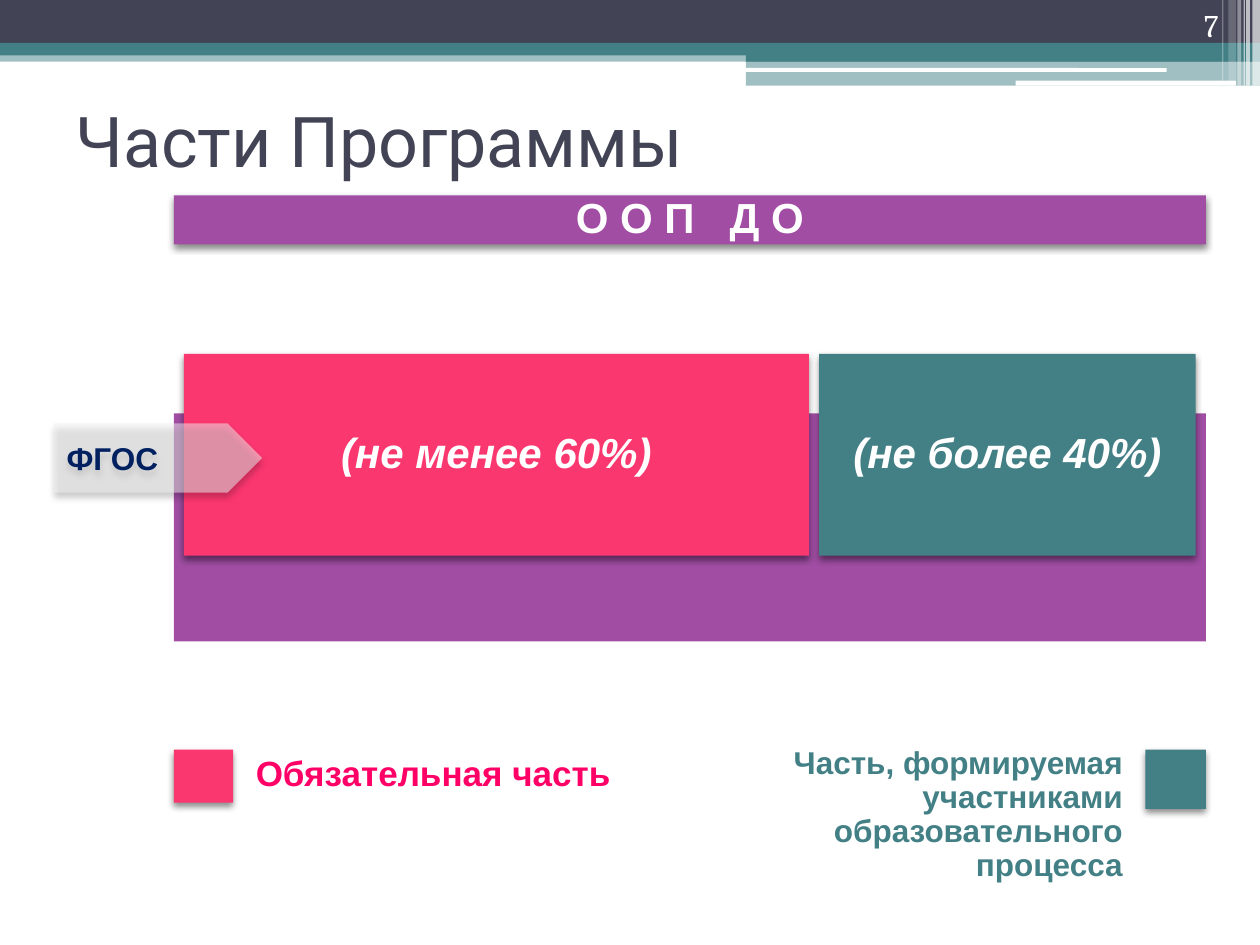
from typing import NamedTuple

import pptx
import pptx.dml.color
import pptx.enum.shapes
import pptx.enum.text
import pptx.oxml
import pptx.oxml.ns
import pptx.util
from lxml import etree

PX = 9144  # EMU in one px, 100 px to the inch
SHAPE = pptx.enum.shapes.MSO_SHAPE
ALIGN = pptx.enum.text.PP_ALIGN
ANCHOR = pptx.enum.text.MSO_ANCHOR

WHITE, NAVY, TEAL = "FFFFFF", "424456", "438086"
PURPLE, PINK, MAGENTA = "A04DA3", "FB376F", "FF0066"
GREY, DARK_BLUE = "F2F2F2", "002060"


class Box(NamedTuple):
    left: int
    top: int
    width: int
    height: int


class Panel(NamedTuple):
    """A filled shape; opacity in percent, shadow opacity 0 for none."""
    box: Box
    fill: str
    opacity: int = 100
    kind: SHAPE = SHAPE.RECTANGLE
    shadow: int = 0
    shadow_distance: int = 2


HEADER = [
    Panel(Box(0, 40, 1000, 9), TEAL, 50),
    Panel(Box(0, 0, 1000, 34), NAVY),
    Panel(Box(0, 34, 1000, 10), TEAL),
    Panel(Box(592, 39, 408, 10), TEAL),
    Panel(Box(592, 48, 408, 20), TEAL, 50),
    Panel(Box(591, 54, 335, 3), WHITE, kind=SHAPE.ROUNDED_RECTANGLE),
    Panel(Box(806, 64, 175, 4), WHITE, kind=SHAPE.ROUNDED_RECTANGLE),
    Panel(Box(994, 0, 6, 68), WHITE, 65),
    Panel(Box(989, 0, 3, 68), WHITE, 65),
    Panel(Box(987, 0, 1, 68), WHITE, 60),
    Panel(Box(982, 0, 3, 68), WHITE, 40),
    Panel(Box(975, 0, 6, 64), WHITE, 20),
    Panel(Box(970, 0, 1, 64), WHITE, 30),
]
PROGRAM_BAR = Panel(Box(138, 155, 819, 39), PURPLE, shadow=45)
BACKDROP = Panel(Box(138, 328, 819, 181), PURPLE)
REQUIRED_PART = Panel(Box(146, 281, 496, 160), PINK, shadow=45)
OPTIONAL_PART = Panel(Box(650, 281, 299, 160), TEAL, shadow=45)
STANDARD_ARROW = Panel(Box(43, 336, 165, 55), GREY, 50, SHAPE.PENTAGON, 40, 3)
LEGEND_KEYS = [
    Panel(Box(138, 595, 47, 42), PINK, shadow=45),
    Panel(Box(909, 595, 48, 47), TEAL, shadow=45),
]


def rgb(color: str) -> pptx.dml.color.RGBColor:
    return pptx.dml.color.RGBColor.from_string(color)


def emu(box: Box) -> list[int]:
    return [length * PX for length in box]


def add_shadow(s, opacity: int, distance: int) -> None:
    s._element.spPr.append(pptx.oxml.parse_xml(
        f'<a:effectLst {pptx.oxml.ns.nsdecls("a")}>'
        f'<a:outerShdw blurRad="{pptx.util.Pt(4)}" dist="{pptx.util.Pt(distance)}" '
        'dir="5400000" algn="ctr" rotWithShape="0"><a:srgbClr val="000000">'
        f'<a:alpha val="{opacity * 1000}"/></a:srgbClr></a:outerShdw></a:effectLst>'))


def draw_panel(slide, panel: Panel):
    s = slide.shapes.add_shape(panel.kind, *emu(panel.box))
    s.fill.solid()
    s.fill.fore_color.rgb = rgb(panel.fill)
    s.line.fill.background()
    if panel.opacity < 100:
        color = s._element.spPr.find(".//" + pptx.oxml.ns.qn("a:srgbClr"))
        alpha = etree.SubElement(color, pptx.oxml.ns.qn("a:alpha"))
        alpha.set("val", str(panel.opacity * 1000))
    if panel.shadow:
        add_shadow(s, panel.shadow, panel.shadow_distance)
    else:
        s.shadow.inherit = False
    return s


def write_text(s, text: str, *, size: int, color: str, font: str = "Arial",
               bold: bool = True, italic: bool = False, align=ALIGN.LEFT,
               anchor=ANCHOR.MIDDLE, spacing: float = 1.0, gap: float = 0,
               inset: tuple[int, int, int, int] = (10, 5, 10, 5)) -> None:
    """Newlines part paragraphs, bars part runs; a lone space is widened by gap points."""
    tf = s.text_frame
    tf.word_wrap = True
    tf.vertical_anchor = anchor
    tf.margin_left, tf.margin_top, tf.margin_right, tf.margin_bottom = (
        side * PX for side in inset)
    for i, line in enumerate(text.split("\n")):
        p = tf.add_paragraph() if i else tf.paragraphs[0]
        p.alignment = align
        p.line_spacing = spacing
        for piece in line.split("|"):
            r = p.add_run()
            r.text = piece
            r.font.size = pptx.util.Pt(size)
            r.font.name = font
            r.font.bold = bold
            r.font.italic = italic
            r.font.color.rgb = rgb(color)
            if piece == " ":
                r._r.get_or_add_rPr().set("spc", str(round(gap * 100)))


def add_label(slide, box: Box, text: str, **style) -> None:
    write_text(slide.shapes.add_textbox(*emu(box)), text, **style)


def main() -> None:
    prs = pptx.Presentation()
    prs.slide_width, prs.slide_height = 1000 * PX, 750 * PX
    slide = prs.slides.add_slide(prs.slide_layouts[6])

    for panel in HEADER:
        draw_panel(slide, panel)
    add_label(slide, Box(50, 52, 900, 118), "Части Программы",
              size=40, color=NAVY, font="Roboto", bold=False)

    write_text(draw_panel(slide, PROGRAM_BAR), "О О П| |Д О", size=24, color=WHITE,
               align=ALIGN.CENTER, spacing=0.9, gap=13.3, inset=(11,) * 4)
    draw_panel(slide, BACKDROP)
    for part, share in ((REQUIRED_PART, "(не менее 60%)"),
                        (OPTIONAL_PART, "(не более 40%)")):
        write_text(draw_panel(slide, part), share, size=24, color=WHITE, italic=True,
                   align=ALIGN.CENTER, spacing=0.9, inset=(17,) * 4)
    write_text(draw_panel(slide, STANDARD_ARROW), "ФГОС", size=18, color=DARK_BLUE)

    add_label(slide, Box(894, 0, 83, 40), "7", size=18, color=WHITE, font="Cambria",
              bold=False, align=ALIGN.RIGHT, anchor=ANCHOR.BOTTOM)
    add_label(slide, Box(185, 595, 331, 40), "Обязательная часть", size=20,
              color=MAGENTA, anchor=ANCHOR.TOP, spacing=0.9, inset=(18, 5, 10, 5))
    add_label(slide, Box(610, 588, 291, 119),
              "Часть, формируемая\nучастниками\nобразовательного\nпроцесса",
              size=18, color=TEAL, align=ALIGN.RIGHT, anchor=ANCHOR.TOP, spacing=0.9)
    for key in LEGEND_KEYS:
        draw_panel(slide, key)

    prs.save("out.pptx")


if __name__ == "__main__":
    main()
